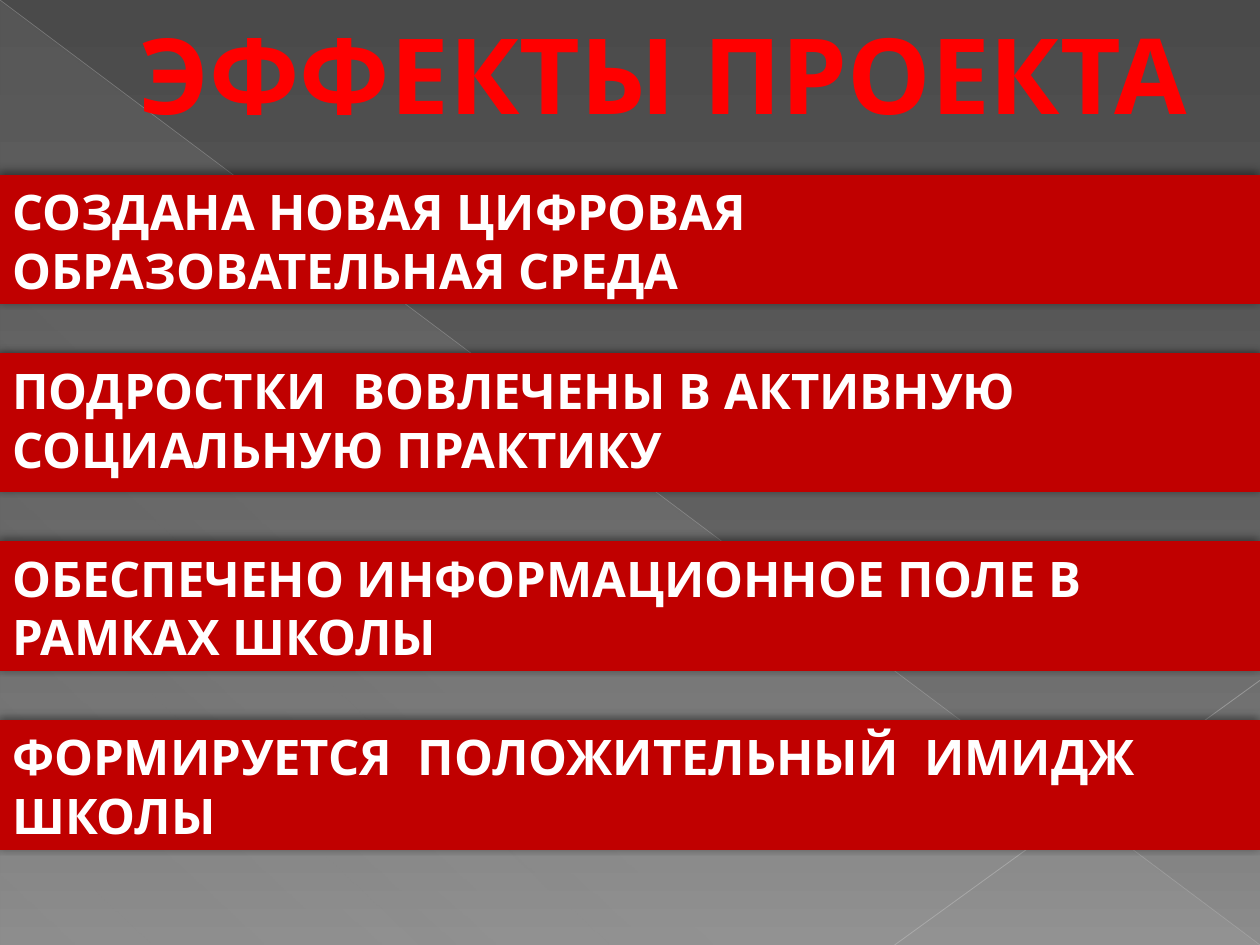
from dataclasses import dataclass

from pptx import Presentation
from pptx.dml.color import RGBColor
from pptx.enum.shapes import MSO_CONNECTOR, MSO_SHAPE
from pptx.enum.text import MSO_ANCHOR, PP_ALIGN
from pptx.oxml import parse_xml
from pptx.oxml.ns import qn
from pptx.util import Inches, Pt

WIDTH, HEIGHT = 10, 7.5
FONT = "League Spartan"
RED, DARK_RED, WHITE = "FF0000", "C00000", "FFFFFF"
BARS_TOP, BAR_GAP = 1.39, 0.4
NS = 'xmlns:a="http://schemas.openxmlformats.org/drawingml/2006/main"'


@dataclass(frozen=True)
class Bar:
    text: str
    height: float = 1.02


@dataclass(frozen=True)
class Ray:
    start: tuple[float, float]
    end: tuple[float, float]
    color: str
    width: float
    opacity: int


@dataclass(frozen=True)
class Stop:
    position: int
    color: str
    opacity: int = 100


BARS = [
    Bar("СОЗДАНА НОВАЯ ЦИФРОВАЯ ОБРАЗОВАТЕЛЬНАЯ СРЕДА"),
    Bar("ПОДРОСТКИ  ВОВЛЕЧЕНЫ В АКТИВНУЮ СОЦИАЛЬНУЮ ПРАКТИКУ", 1.09),
    Bar("ОБЕСПЕЧЕНО ИНФОРМАЦИОННОЕ ПОЛЕ В РАМКАХ ШКОЛЫ"),
    Bar("ФОРМИРУЕТСЯ  ПОЛОЖИТЕЛЬНЫЙ  ИМИДЖ  ШКОЛЫ"),
]
RAYS = [
    Ray((0, 0), (1, 1), "BFBFBF", 0.39, 35),
    Ray((1, 0.72), (0.71, 1), "C6C6C6", 0.47, 45),
]
BACKDROP = [Stop(0, "4A4A4A"), Stop(60, "626262"), Stop(100, "8C8C8C")]
SHEEN = [Stop(0, "D2D2D2", 10), Stop(70, "D2D2D2", 8), Stop(100, "D2D2D2", 1)]


def rgb(color: str) -> RGBColor:
    """Turn a hex string into a colour."""
    return RGBColor.from_string(color)


def set_gradient(fill, parent, stops: list[Stop], angle: int) -> None:
    """Give a fill a linear gradient with any number of stops."""
    fill.gradient()
    old = parent.find(qn("a:gradFill"))
    marks = "".join(
        f'<a:gs pos="{stop.position * 1000}"><a:srgbClr val="{stop.color}">'
        f'<a:alpha val="{stop.opacity * 1000}"/></a:srgbClr></a:gs>'
        for stop in stops
    )
    parent.replace(old, parse_xml(
        f'<a:gradFill {NS} rotWithShape="1"><a:gsLst>{marks}</a:gsLst>'
        f'<a:lin ang="{angle * 60000}" scaled="0"/></a:gradFill>'
    ))


def draw_backdrop(page) -> None:
    """Paint the background and its pale triangle."""
    fill = page.background.fill
    set_gradient(fill, page.element.cSld.bg.bgPr, BACKDROP, 90)
    triangle = page.shapes.add_shape(
        MSO_SHAPE.RIGHT_TRIANGLE, 0, 0, Inches(WIDTH), Inches(HEIGHT))
    triangle.shadow.inherit = False
    triangle.line.fill.background()
    set_gradient(triangle.fill, triangle.element.spPr, SHEEN, 133)


def draw_ray(page, ray: Ray) -> None:
    """Draw a thin translucent line between two shares of the slide."""
    ends = [Inches(share * side) for point in (ray.start, ray.end)
            for share, side in zip(point, (WIDTH, HEIGHT))]
    line = page.shapes.add_connector(MSO_CONNECTOR.STRAIGHT, *ends)
    line.line.color.rgb = rgb(ray.color)
    line.line.width = Pt(ray.width)
    properties = line.element.spPr
    properties.find(".//" + qn("a:srgbClr")).append(
        parse_xml(f'<a:alpha {NS} val="{ray.opacity * 1000}"/>'))
    properties.append(parse_xml(f"<a:effectLst {NS}/>"))


def write(frame, text: str, size: int, color: str, align: PP_ALIGN):
    """Fill a text frame with one bold paragraph."""
    frame.word_wrap = True
    para = frame.paragraphs[0]
    para.text = text
    para.alignment = align
    para.font.name = FONT
    para.font.size = Pt(size)
    para.font.bold = True
    para.font.color.rgb = rgb(color)
    return para


def draw_title(page, text: str) -> None:
    """Write the outlined heading."""
    box = page.shapes.add_textbox(0, Inches(-0.19), Inches(WIDTH), Inches(1.53))
    box.text_frame.vertical_anchor = MSO_ANCHOR.MIDDLE
    para = write(box.text_frame, text, 60, RED, PP_ALIGN.CENTER)
    para._p.get_or_add_pPr().set("marL", str(Inches(0.53)))
    span = para.runs[0]
    span._r.get_or_add_rPr().insert(0, parse_xml(
        f'<a:ln {NS} w="{Pt(0.5)}"><a:solidFill><a:srgbClr val="B12761"/>'
        "</a:solidFill></a:ln>"))


def draw_bar(page, bar: Bar, top: float) -> None:
    """Draw a full-width red bar with its statement."""
    box = page.shapes.add_shape(
        MSO_SHAPE.RECTANGLE, 0, Inches(top), Inches(WIDTH), Inches(bar.height))
    box.fill.solid()
    box.fill.fore_color.rgb = rgb(DARK_RED)
    box.line.color.rgb = rgb(DARK_RED)
    box.line.width = Pt(0.75)
    box.shadow.inherit = False
    box.element.spPr.find(qn("a:effectLst")).append(parse_xml(
        f'<a:outerShdw {NS} blurRad="{Pt(5)}" dist="{Pt(2)}" '
        f'dir="{245 * 60000}" rotWithShape="0"><a:srgbClr val="000000">'
        '<a:alpha val="50000"/></a:srgbClr></a:outerShdw>'))
    box.text_frame.vertical_anchor = MSO_ANCHOR.TOP
    write(box.text_frame, bar.text, 28, WHITE, PP_ALIGN.LEFT)


def main() -> None:
    """Build the slide and save it."""
    deck = Presentation()
    deck.slide_width, deck.slide_height = Inches(WIDTH), Inches(HEIGHT)
    page = deck.slides.add_slide(deck.slide_layouts[6])
    draw_backdrop(page)
    for ray in RAYS:
        draw_ray(page, ray)
    draw_title(page, "ЭФФЕКТЫ ПРОЕКТА")
    top = BARS_TOP
    for bar in BARS:
        draw_bar(page, bar, top)
        top += bar.height + BAR_GAP
    deck.save("out.pptx")


if __name__ == "__main__":
    main()
